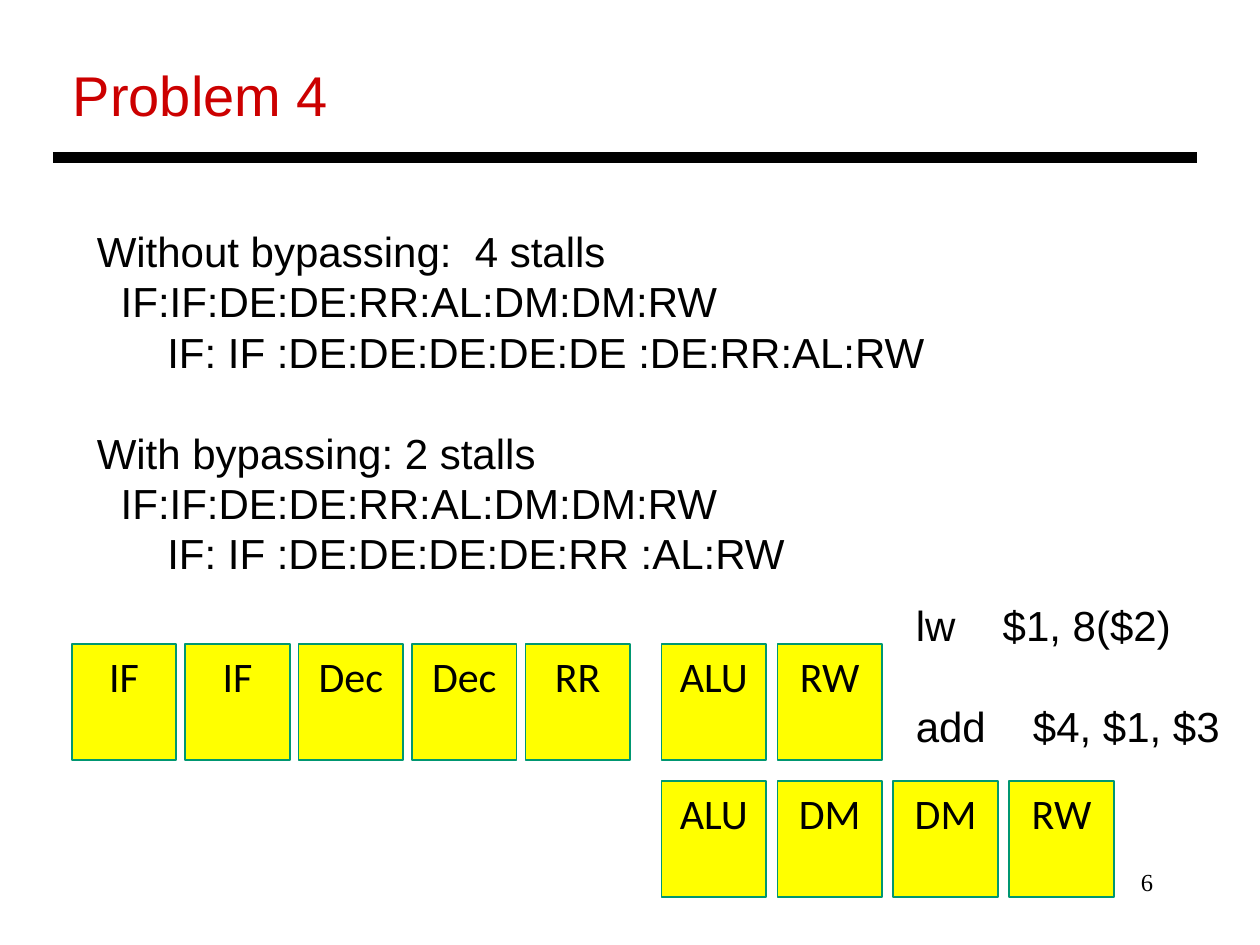
from pptx import Presentation
from pptx.enum import shapes as sh, text as tx
from pptx.oxml import parse_xml
from pptx.oxml.ns import nsdecls, qn
from pptx.dml.color import RGBColor
from pptx.util import Inches, Pt

HUES = {"ink": "000000", "title": "CC0000", "fill": "FFFF00", "edge": "009771"}
LEFT, MID, RIGHT = tx.PP_ALIGN.LEFT, tx.PP_ALIGN.CENTER, tx.PP_ALIGN.RIGHT


def hue(name):
    return RGBColor.from_string(HUES[name])


def style(para, face, size, color="ink", align=LEFT):
    para.alignment = align
    for run in para.runs:
        run.font.name = face
        run.font.size = Pt(size)
        run.font.color.rgb = hue(color)


def add_text(slide, box, lines, face="Arial", size=24, color="ink", align=LEFT):
    frame = slide.shapes.add_textbox(*map(Inches, box)).text_frame
    frame.word_wrap = True
    frame.text = "\n".join(lines)
    for para in frame.paragraphs:
        style(para, face, size, color, align)
        if face == "Arial":
            para.line_spacing = Pt(size * 1.2)
    return frame.paragraphs


def add_head(slide, left, top, width):
    add_text(slide, (left + 0.06, top, 4, 0.64), ["Problem 4"], size=32, color="title")
    y = Inches(top + 0.82)
    rule = slide.shapes.add_connector(
        sh.MSO_CONNECTOR.STRAIGHT, Inches(left), y, Inches(left + width), y)
    rule.line.color.rgb = hue("ink")
    rule.line.width = Pt(6)
    rule._element.spPr.append(parse_xml(f"<a:effectLst {nsdecls('a')}/>"))


def add_notes(slide, box):
    lines = [
        (0, "Without bypassing:  4 stalls"),
        (0.19, "IF:IF:DE:DE:RR:AL:DM:DM:RW"),
        (0.56, "IF: IF :DE:DE:DE:DE:DE :DE:RR:AL:RW"),
        (0, "With bypassing: 2 stalls"),
        (0.19, "IF:IF:DE:DE:RR:AL:DM:DM:RW"),
        (0.56, "IF: IF :DE:DE:DE:DE:RR :AL:RW"),
    ]
    paras = add_text(slide, box, [line for _, line in lines])
    for para, (indent, _) in zip(paras, lines):
        para._p.get_or_add_pPr().set("marL", str(Inches(indent)))
    paras[3].space_before = Pt(28.8)


def add_code(slide, box):
    paras = add_text(slide, box, ["lw\t$1, 8($2)", "add\t$4, $1, $3"])
    paras[1].space_before = Pt(28.8)
    for para, stop in zip(paras, (0.69, 0.93)):
        tabs = parse_xml(
            f'<a:tabLst {nsdecls("a")}><a:tab pos="{Inches(stop)}" algn="l"/></a:tabLst>')
        props = para._p.get_or_add_pPr()
        props.insert_element_before(tabs, "a:defRPr", "a:extLst")


def add_stages(slide, left, top, pitch, names):
    for i, name in enumerate(names):
        cell = slide.shapes.add_shape(
            sh.MSO_SHAPE.RECTANGLE, Inches(left + i * pitch), Inches(top),
            Inches(0.83), Inches(0.92))
        cell.shadow.inherit = False
        cell.fill.solid()
        cell.fill.fore_color.rgb = hue("fill")
        cell.line.color.rgb = hue("edge")
        cell.line.width = Pt(1)
        frame = cell.text_frame
        frame.vertical_anchor = tx.MSO_ANCHOR.TOP
        frame.margin_top = Inches(0.05)
        frame.margin_left = frame.margin_right = Inches(0.05)
        frame.text = name
        style(frame.paragraphs[0], "Calibri", 24, align=MID)


def main():
    deck = Presentation()
    deck.slide_width, deck.slide_height = Inches(10), Inches(7.5)
    slide = deck.slides.add_slide(deck.slide_layouts[6])
    add_text(slide, (7.17, 6.83, 2.08, 0.5), ["6"], "Times New Roman", 14, align=RIGHT)
    add_head(slide, 0.42, 0.43, 9.08)
    add_stages(slide, 0.57, 5.11, 0.9, ["IF", "IF", "Dec", "Dec", "RR"])
    add_stages(slide, 5.25, 5.11, 0.92, ["ALU", "RW"])
    add_stages(slide, 5.25, 6.2, 0.92, ["ALU", "DM", "DM", "RW"])
    add_code(slide, (7.17, 4.71, 2.8, 1.31))
    add_notes(slide, (0.67, 1.74, 9.33, 2.93))
    deck.save("out.pptx")


if __name__ == "__main__":
    main()
